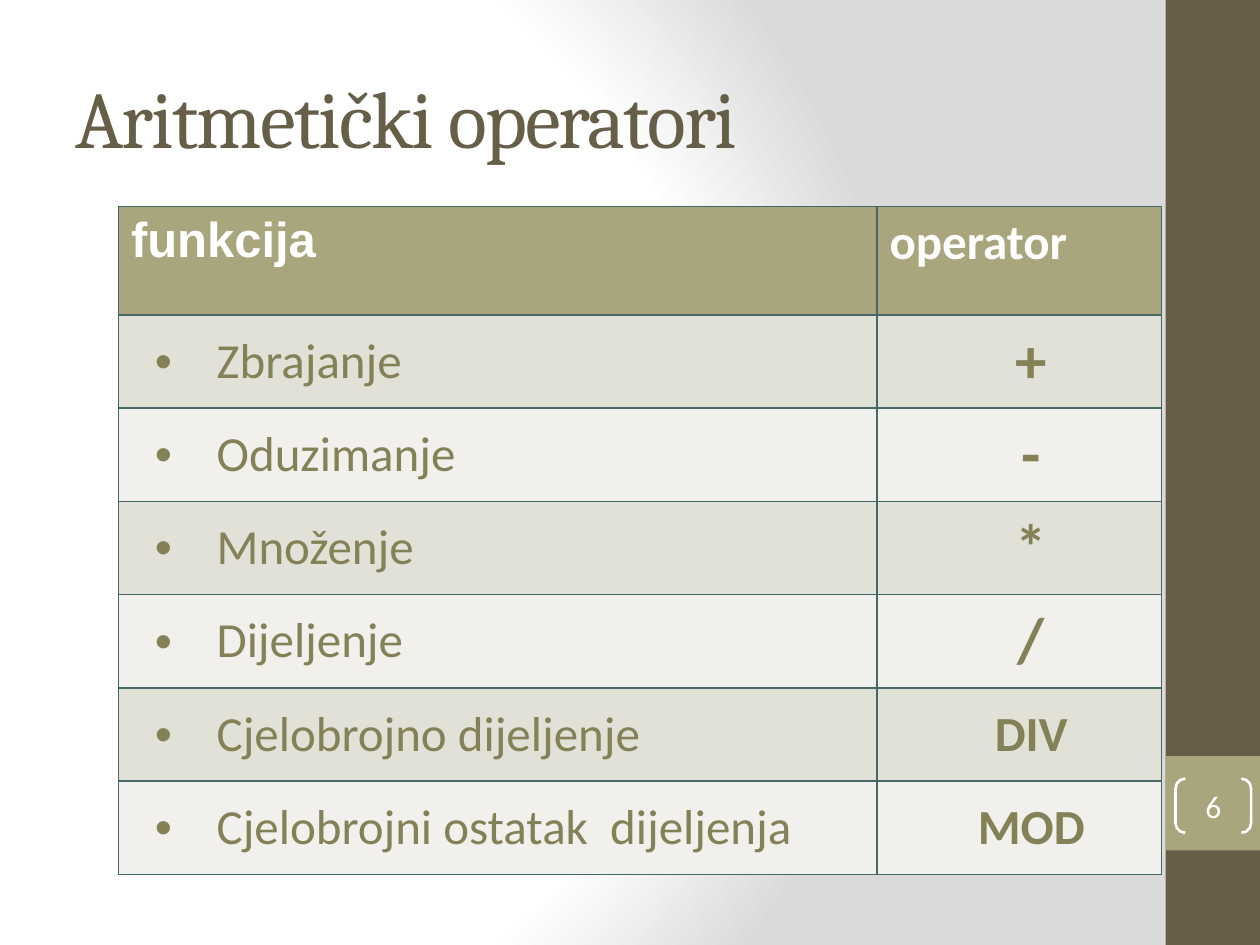
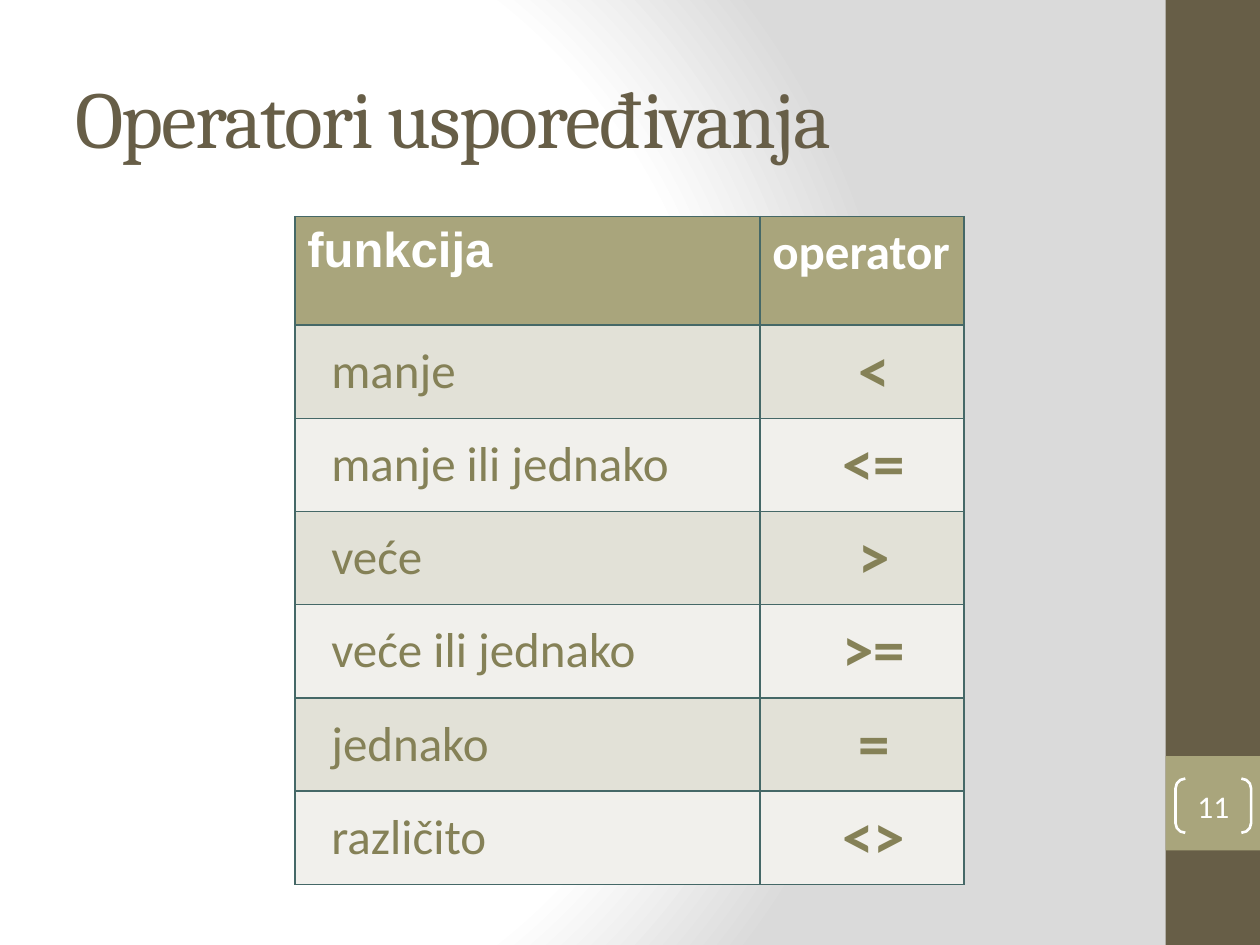
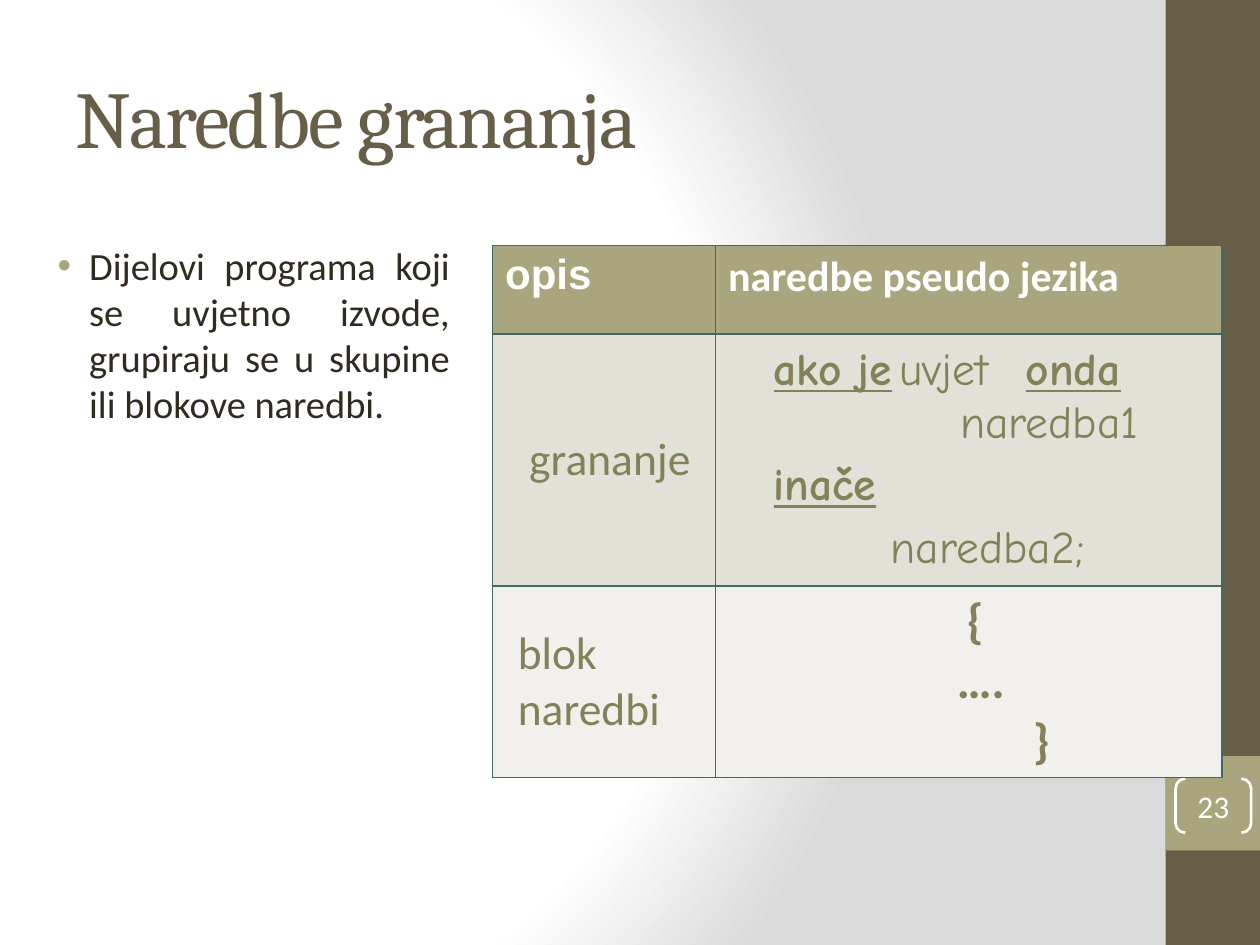
from pptx import Presentation
from pptx.dml.color import RGBColor
from pptx.enum.shapes import MSO_SHAPE
from pptx.enum.text import MSO_ANCHOR, PP_ALIGN
from pptx.oxml import parse_xml
from pptx.oxml.ns import nsdecls, qn
from pptx.util import Inches, Pt

LEFT, CENTER, JUSTIFY = PP_ALIGN.LEFT, PP_ALIGN.CENTER, PP_ALIGN.JUSTIFY
TOP, MIDDLE = MSO_ANCHOR.TOP, MSO_ANCHOR.MIDDLE
RECTANGLE, BRACKETS = MSO_SHAPE.RECTANGLE, MSO_SHAPE.DOUBLE_BRACKET

WIDTH, HEIGHT = 10, 7.5
BAND = 0.75
BROWN, OLIVE, WHITE = "675E47", "A9A57C", "FFFFFF"
INK, CELL_TEXT, GRID = "2F2B20", "858157", "456867"
STRIPES = ["E2E1D7", "F1F0EC"]
color = RGBColor.from_string


def write(frame, text, size=28, font="Calibri", fill=CELL_TEXT, bold=False, align=LEFT,
          margin=0, indent=0, before=0, bullet=None, tabs=(), spacing=0):
    """Add a paragraph; pieces between ** marks are bold and underlined."""
    paragraph = frame.add_paragraph() if frame.text else frame.paragraphs[0]
    paragraph.alignment = align
    properties = paragraph._p.get_or_add_pPr()
    properties.set("marL", str(Inches(margin)))
    properties.set("indent", str(Inches(indent)))
    if bullet:
        properties.append(parse_xml(
            f'<a:buClr {nsdecls("a")}><a:srgbClr val="{bullet}"/></a:buClr>'))
        properties.append(parse_xml(f'<a:buFont {nsdecls("a")} typeface="Arial"/>'))
        properties.append(parse_xml(f'<a:buChar {nsdecls("a")} char="•"/>'))
    if tabs:
        stops = "".join(f'<a:tab pos="{Inches(stop)}" algn="l"/>' for stop in tabs)
        properties.append(parse_xml(f'<a:tabLst {nsdecls("a")}>{stops}</a:tabLst>'))
    if before:
        paragraph.space_before = Pt(before)
    for number, piece in enumerate(text.split("**")):
        if not piece:
            continue
        keyword = number % 2 == 1
        run = paragraph.add_run()
        run.text = piece
        run.font.size = Pt(size)
        run.font.name = font
        run.font.color.rgb = color(fill)
        run.font.bold = bold or keyword
        run.font.underline = keyword
        if spacing:
            run._r.get_or_add_rPr().set("spc", str(spacing * 100))


def add_block(slide, kind, left, top, width, height, fill=None):
    shape = slide.shapes.add_shape(
        kind, Inches(left), Inches(top), Inches(width), Inches(height))
    shape.shadow.inherit = False
    if fill:
        shape.fill.solid()
        shape.fill.fore_color.rgb = color(fill)
        shape.line.fill.background()
    else:
        shape.fill.background()
    return shape


hanging = dict(margin=0.68, indent=-0.49)
code = dict(size=26, font="Comic Neue")
brace = dict(bold=True, align=CENTER)

arithmetic = [("Zbrajanje", "+"), ("Oduzimanje", "-"), ("Množenje", "*"), ("Dijeljenje", "/"),
              ("Cjelobrojno dijeljenje", "DIV"), ("Cjelobrojni ostatak  dijeljenja", "MOD")]
comparison = [("manje", "<"), ("manje ili jednako", "<="), ("veće", ">"),
              ("veće ili jednako", ">="), ("jednako", "="), ("različito", "<>")]

# Each cell is a list of (text, format) paragraphs.
operator_cells = [
    [([(name, dict(hanging, bullet=mark))],
      [(sign, dict(hanging, bold=True, align=CENTER, size=28 if sign.isalpha() else 36))])
     for name, sign in operators]
    for operators, mark in [(arithmetic, CELL_TEXT), (comparison, None)]]
branching_cells = [
    ([("grananje", dict(size=26, margin=0.19))],
     [("**ako je**\tuvjet\t**onda**", dict(code, tabs=(1.3, 2.37))),
      ("naredba1", dict(code, margin=1.48)),
      ("**inače**", dict(code, before=6)),
      ("naredba2;", dict(code, margin=0.93, before=6))]),
    ([("blok naredbi", dict(size=26, margin=0.1))],
     [("{", dict(brace, margin=0.1)),
      ("….", dict(brace, margin=0.19)),
      ("}", dict(brace, margin=1.15))])]

operator_rows = [0.86] + [0.74] * 6
operator_header = ("funkcija", "operator")
# title, slide number, table left and top, columns, rows, header, header size, cells
lessons = [
    ("Aritmetički operatori", 6, 0.94, 1.64, [6.02, 2.26], operator_rows,
     operator_header, 28, operator_cells[0]),
    ("Operatori uspoređivanja", 11, 2.34, 1.72, [3.69, 1.62], operator_rows,
     operator_header, 28, operator_cells[1]),
    ("Naredbe grananja", 23, 3.91, 1.95, [1.77, 4.02], [0.7, 1.94, 1.52],
     ("opis", "naredbe pseudo jezika"), 24, branching_cells)]

prs = Presentation()
prs.slide_width, prs.slide_height = Inches(WIDTH), Inches(HEIGHT)

master = prs.slide_master
master.background.fill.solid()
backdrop = master.element.find(".//" + qn("p:bgPr"))
stops = "".join(f'<a:gs pos="{share * 1000}"><a:srgbClr val="{shade}"/></a:gs>'
                for share, shade in [(0, WHITE), (75, WHITE), (100, "DADADA")])
backdrop.replace(backdrop[0], parse_xml(
    f'<a:gradFill {nsdecls("a")} rotWithShape="1"><a:gsLst>{stops}</a:gsLst>'
    '<a:path path="circle"><a:fillToRect l="20000" t="50000" r="100000" b="50000"/></a:path>'
    '</a:gradFill>'))

for title, number, left, top, columns, rows, header, header_size, cells in lessons:
    slide = prs.slides.add_slide(prs.slide_layouts[6])
    add_block(slide, RECTANGLE, WIDTH - BAND, 0, BAND, HEIGHT, BROWN)
    add_block(slide, RECTANGLE, WIDTH - BAND, HEIGHT - 2 * BAND, BAND, BAND, OLIVE)

    heading = slide.shapes.add_textbox(
        Inches(0.5), Inches(0.3), Inches(8.33), Inches(1.25)).text_frame
    heading.word_wrap = True
    heading.vertical_anchor = MIDDLE
    write(heading, title, size=46, font="Cambria", fill=BROWN, spacing=-1)

    page = add_block(slide, BRACKETS, 9.33, 6.18, 0.6, 0.43)
    page.adjustments[0] = 0.18
    page.line.color.rgb = color(WHITE)
    page.line.width = Pt(1.5)
    page_text = page.text_frame
    page_text.margin_left = page_text.margin_right = 0
    page_text.margin_top = page_text.margin_bottom = 0
    page_text.vertical_anchor = MIDDLE
    write(page_text, str(number), size=18, fill=WHITE, align=CENTER)

    table = slide.shapes.add_table(
        len(rows), len(columns), Inches(left), Inches(top),
        Inches(sum(columns)), Inches(sum(rows))).table
    for column, width in zip(table.columns, columns):
        column.width = Inches(width)
    for row, height in zip(table.rows, rows):
        row.height = Inches(height)
    header_cells = tuple(
        [(label, dict(size=header_size, font=font, fill=WHITE, bold=True))]
        for label, font in zip(header, ("Arial", "Calibri")))
    for r, row_cells in enumerate([header_cells] + cells):
        for c, paragraphs in enumerate(row_cells):
            cell = table.cell(r, c)
            for side in ("lnL", "lnR", "lnT", "lnB"):
                cell._tc.get_or_add_tcPr().append(parse_xml(
                    f'<a:{side} {nsdecls("a")} w="{Pt(1)}"><a:solidFill>'
                    f'<a:srgbClr val="{GRID}"/></a:solidFill></a:{side}>'))
            cell.fill.solid()
            cell.fill.fore_color.rgb = color(STRIPES[(r - 1) % 2] if r else OLIVE)
            cell.vertical_anchor = MIDDLE if r else TOP
            for text, style in paragraphs:
                write(cell.text_frame, text, **style)

# The branching slide is the last one: its code cell is inset, and a text stands beside the table.
table.cell(1, 1).margin_left = Inches(0.46)
explanation = slide.shapes.add_textbox(
    Inches(0.23), Inches(1.87), Inches(3.44), Inches(3.36)).text_frame
explanation.word_wrap = True
write(explanation,
      "Dijelovi programa koji se uvjetno izvode, grupiraju se u skupine ili blokove naredbi.",
      size=22, fill=INK, align=JUSTIFY, margin=0.38, indent=-0.25, bullet=OLIVE)

prs.save("out.pptx")
